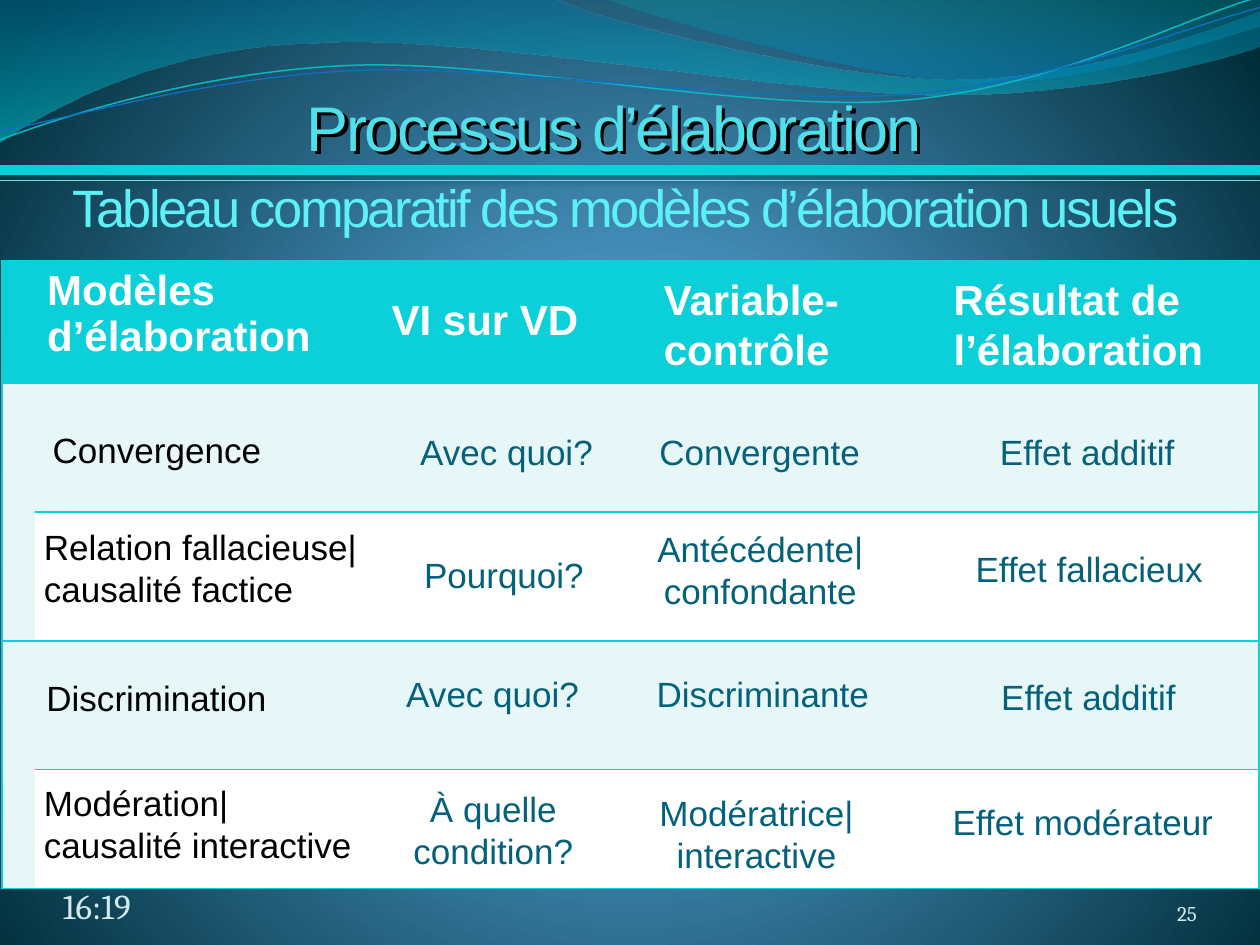
from typing import NamedTuple

from lxml import etree
from pptx import Presentation
from pptx.dml.color import RGBColor
from pptx.enum import shapes, text
from pptx.oxml.ns import qn
from pptx.util import Emu, Inches, Pt

TEAL, DEEP, WHITE, BLACK, PALE = "0BD0D9", "04617B", "FFFFFF", "000000", "E7F7F8"
MIST = "D1EAEE"
LEFT, CENTER, RIGHT = text.PP_ALIGN.LEFT, text.PP_ALIGN.CENTER, text.PP_ALIGN.RIGHT


class Label(NamedTuple):
    x: float
    y: float
    w: float
    words: str
    lines: int = 1


class Stop(NamedTuple):
    pos: int
    color: str
    alpha: int = 100


class Wave(NamedTuple):
    start: tuple
    segments: list
    stops: tuple = ()
    line: str = ""
    width: float = 0


HEADERS = [
    Label(30.1, 30.4, 18.5, "VI sur VD"),
    Label(51.7, 28.27, 23.1, "Variable-contrôle", 2),
    Label(74.7, 28.27, 25.5, "Résultat de l’élaboration", 2),
]
MODELS = [
    Label(3.2, 44.67, 28.7, "Convergence"),
    Label(2.5, 54.93, 27.1, "Relation fallacieuse| causalité factice", 2),
    Label(2.7, 70.93, 25.6, "Discrimination"),
    Label(2.5, 82, 26.8, "Modération|\vcausalité interactive", 2),
]
ANSWERS = [
    Label(31.5, 44.93, 17.4, "Avec quoi?"),
    Label(51.1, 44.93, 18.4, "Convergente"),
    Label(75.6, 44.93, 21.4, "Effet additif"),
    Label(31.7, 57.87, 16.6, "Pourquoi?"),
    Label(50, 55.2, 20.7, "Antécédente| confondante", 2),
    Label(75.8, 57.33, 21.3, "Effet fallacieux"),
    Label(31.2, 70.53, 15.8, "Avec quoi?"),
    Label(50.2, 70.53, 20.7, "Discriminante"),
    Label(74.6, 70.8, 23.6, "Effet additif"),
    Label(29.4, 82.67, 19.5, "À quelle condition?", 2),
    Label(49.7, 83.07, 20.7, "Modératrice| interactive", 2),
    Label(73.8, 84, 24.3, "Effet modérateur"),
]
WAVES = [
    Wave((0, 0), [
        (4.4, -0.01), (4.76, 0.17, 6.64, 0.63, 7.58, 0.63),
        (8.53, 0.63, 9.58, 0.26, 10, 0.09), (10.01, 0.36),
        (9.83, 0.44, 8.7, 0.76, 7.46, 0.75), (6.22, 0.75, 3.82, 0.28, 2.57, 0.34),
        (1.29, 0.36, 0.46, 0.83, -0.01, 1.13), (0, 0),
    ], (Stop(0, "0074A1", 45), Stop(100, "00C6CF", 55))),
    Wave((4.79, -0.01), [
        (5.09, 0.11, 6.82, 0.62, 7.69, 0.65), (8.56, 0.69, 9.61, 0.32, 10, 0.21),
        (10, 0), (4.79, -0.01),
    ], (Stop(0, "00A1A9", 30), Stop(80, "008BBF", 45))),
    Wave((0, 1.11), [
        (0.48, 0.93, 1.58, 0.57, 2.77, 0.52), (3.95, 0.47, 5.93, 0.89, 7.13, 0.8),
        (8.33, 0.71, 9.38, 0.15, 9.98, -0.02),
    ], line="0AB8BF", width=0.85),
    Wave((0, 1.04), [
        (0.47, 0.96, 1.64, 0.61, 2.83, 0.56), (4.03, 0.51, 5.97, 0.84, 7.17, 0.75),
        (8.36, 0.67, 9.41, 0.21, 10, 0.06),
    ], line="0F6FC6", width=0.75),
]

prs = Presentation()
prs.slide_width, prs.slide_height = Inches(10), Inches(7.5)
s = prs.slides.add_slide(prs.slide_layouts[6])


def px(share: float) -> Emu:
    return Emu(int(prs.slide_width * share / 100))


def py(share: float) -> Emu:
    return Emu(int(prs.slide_height * share / 100))


def rgb(color: str) -> RGBColor:
    return RGBColor.from_string(color)


def sub(parent, tag: str, **attrs):
    return etree.SubElement(parent, qn(tag), {k: str(v) for k, v in attrs.items()})


def add_color(parent, color: str, alpha: int = 100) -> None:
    clr = sub(parent, "a:srgbClr", val=color)
    if alpha < 100:
        sub(clr, "a:alpha", val=alpha * 1000)


def add_shadow(parent, color: str, alpha: int, blur: float, dist: float, angle: int) -> None:
    shadow = sub(sub(parent, "a:effectLst"), "a:outerShdw", blurRad=Pt(blur),
                 dist=Pt(dist), dir=angle * 60000, algn="ctr", rotWithShape=0)
    add_color(shadow, color, alpha)


def add_gradient(fill, holder, stops, radial: bool = False) -> None:
    fill.gradient()
    grad = next(holder.iter(qn("a:gradFill")))
    for child in list(grad):
        grad.remove(child)
    gs_list = sub(grad, "a:gsLst")
    for stop in stops:
        add_color(sub(gs_list, "a:gs", pos=stop.pos * 1000), stop.color, stop.alpha)
    if radial:
        sub(sub(grad, "a:path", path="circle"), "a:fillToRect",
            l=10000, t=110000, r=10000, b=100000)
    else:
        sub(grad, "a:lin", ang=5400000, scaled=1)


def format_text(tf, words: str, *, size: int, color: str, bold: bool = False,
                font: str = "Arial", align=LEFT, spc: int = 0) -> None:
    tf.word_wrap = True
    p = tf.paragraphs[0]
    p.text, p.alignment = words, align
    for r in p.runs:
        r.font.size, r.font.name, r.font.bold = Pt(size), font, bold
        r.font.color.rgb = rgb(color)
        if spc:
            r.font._element.set("spc", str(spc))


def add_text(x: float, y: float, w: float, h: float, words: str, *,
             flush: bool = False, shadow: bool = False, **style) -> None:
    sp = s.shapes.add_textbox(px(x), py(y), px(w), py(h))
    tf = sp.text_frame
    if flush:
        tf.margin_left = tf.margin_right = tf.margin_top = tf.margin_bottom = 0
        tf.vertical_anchor = text.MSO_ANCHOR.BOTTOM
    if shadow:
        add_shadow(sp._element.spPr, BLACK, 100, 0, 3, 45)
    format_text(tf, words, **style)


def add_labels(labels: list[Label], size: int, **style) -> None:
    for label in labels:
        height = (0.1 + label.lines * size * 1.2 / 72) / 7.5 * 100
        add_text(label.x, label.y, label.w, height, label.words, size=size, **style)


def add_wave(wave: Wave) -> None:
    ends = [wave.start] + [seg[-2:] for seg in wave.segments]
    grid = [(round(x * 100), round(y * 100)) for x, y in ends]
    left, top = (min(axis) for axis in zip(*grid))
    builder = s.shapes.build_freeform(*grid[0], scale=Inches(0.01))
    builder.add_line_segments(grid[1:], close=bool(wave.stops))
    sp = builder.convert_to_shape()
    sp.shadow.inherit = False
    steps = list(sp._element.iter(qn("a:lnTo")))
    for step, seg in zip(steps, wave.segments):
        if len(seg) == 6:
            curve = etree.Element(qn("a:cubicBezTo"))
            for x, y in zip(seg[::2], seg[1::2]):
                sub(curve, "a:pt", x=round(x * 100) - left, y=round(y * 100) - top)
            step.getparent().replace(step, curve)
    if wave.stops:
        add_gradient(sp.fill, sp._element, wave.stops)
        sp.line.fill.background()
    else:
        sp.fill.background()
        sp.line.color.rgb, sp.line.width = rgb(wave.line), Pt(wave.width)


def add_rule(y: float, color: str, width: float, shadow: bool = False) -> None:
    line = s.shapes.add_connector(shapes.MSO_CONNECTOR.STRAIGHT, 0, py(y), px(100), py(y))
    line.line.color.rgb, line.line.width = rgb(color), Pt(width)
    if shadow:
        add_shadow(line._element.spPr, "024B4E", 48, 4.5, 3, 90)
    else:
        sub(line._element.spPr, "a:effectLst")


def add_grid(cols: list[float], rows: list[float]) -> None:
    table = s.shapes.add_table(len(rows), len(cols), px(0.14), py(27.6),
                               px(sum(cols)), py(sum(rows))).table
    for col, width in zip(table.columns, cols):
        col.width = px(width)
    for row, height in zip(table.rows, rows):
        row.height = py(height)
    for i in range(len(rows)):
        for j in range(len(cols)):
            cell = table.cell(i, j)
            cell.fill.solid()
            cell.fill.fore_color.rgb = rgb(TEAL if i == 0 else PALE if i % 2 else WHITE)
            drawn = {"L": j == 0, "R": j == len(cols) - 1, "T": True, "B": True}
            tcpr = cell._tc.get_or_add_tcPr()
            for k, (side, visible) in enumerate(drawn.items()):
                ln = sub(tcpr, f"a:ln{side}", w=Pt(1))
                tcpr.insert(k, ln)
                if visible:
                    add_color(sub(ln, "a:solidFill"), TEAL)
                else:
                    sub(ln, "a:noFill")
    for top in (1, 3):
        table.cell(top, 0).merge(table.cell(top + 1, 0))
    format_text(table.cell(0, 1).text_frame, "Modèles d’élaboration",
                size=24, color=WHITE, bold=True)


add_gradient(s.background.fill, s._element,
             [Stop(0, "4AA0D6"), Stop(25, "4C98C7"), Stop(100, "002C38")], radial=True)
for wave in WAVES:
    add_wave(wave)
add_text(0, 6.93, 97.5, 10.4, "Processus d’élaboration", flush=True, shadow=True,
         size=36, color="51E0EA", align=CENTER, spc=-150)
add_text(5, 92.67, 23.3, 5.33, "16:19", flush=True, size=20, color=MIST, font="Cambria")
add_text(86.7, 92.67, 8.3, 5.33, "25", flush=True, size=12, color=MIST,
         font="Cambria", align=RIGHT)
add_grid([2.6, 24.4, 22.1, 18.1, 17.4, 15.2], [12.97, 13.63, 13.63, 13.63, 12.59])
add_rule(18, TEAL, 6, shadow=True)
add_rule(19.07, "77D9E8", 0.75)
add_text(-0.4, 17.87, 100.1, 8.13, "Tableau comparatif des modèles d’élaboration usuels",
         size=30, color="5EF0F7", align=CENTER, spc=-150)
add_labels(HEADERS, 24, color=WHITE, bold=True)
add_labels(MODELS, 20, color=BLACK)
add_labels(ANSWERS, 20, color=DEEP, align=CENTER)
prs.save("out.pptx")
